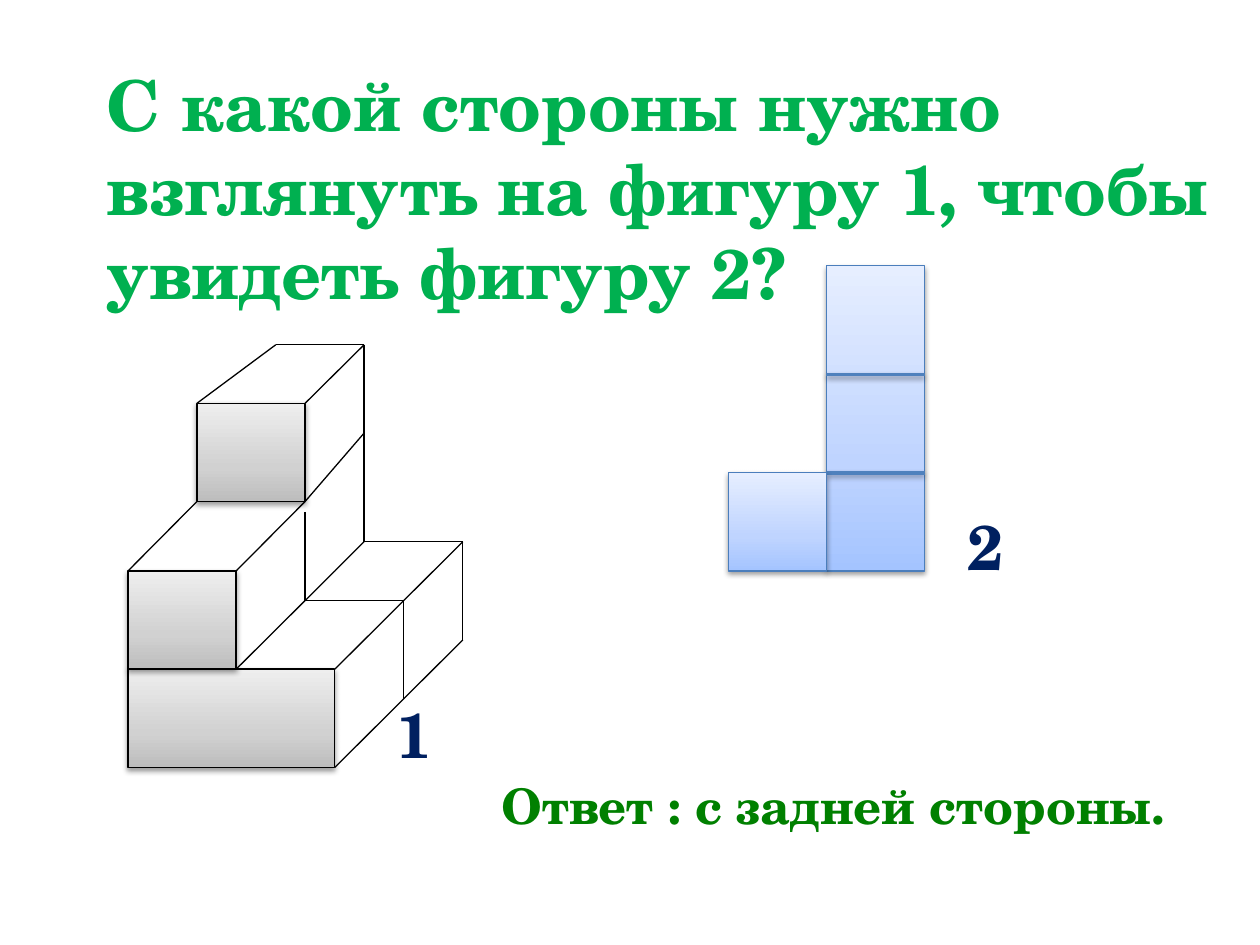
from dataclasses import dataclass

from lxml import etree
from pptx import Presentation
from pptx.dml.color import RGBColor
from pptx.enum.shapes import MSO_CONNECTOR, MSO_SHAPE
from pptx.oxml.ns import qn
from pptx.util import Cm, Pt

RECTANGLE = MSO_SHAPE.RECTANGLE
STRAIGHT = MSO_CONNECTOR.STRAIGHT


@dataclass(frozen=True)
class Theme:
    font: str = "TeX Gyre Schola"
    title: str = "00B050"
    answer: str = "008000"
    label: str = "002060"
    outline: str = "000000"
    blue_outline: str = "4B7EBC"
    blue_divider: str = "4F81BD"
    blue_stops: tuple = ((0, "A4C4FF"), (35, "BFD4FF"), (100, "E6EEFF"))
    gray_stops: tuple = ((0, "BDBDBD"), (35, "D1D1D1"), (100, "EEEEEE"))
    title_size: int = 40
    answer_size: int = 28
    label_size: int = 36
    thin: float = 0.75
    thick: float = 2


THEME = Theme()

# Side of a cube face, and width of a front face of figure 1
CUBE = 1.98
FRONT = 2.18

# Columns and rows of the corners of figure 1, in centimetres
LEFT, TOWER_LEFT, STEP_RIGHT = 2.58, 3.97, 4.76
TOWER_RIGHT, BASE_RIGHT, TOWER_BACK = 6.15, 6.75, 7.34
BASE_MIDDLE, BASE_BACK = 8.13, 9.33
TOP, TOWER_TOP, STEP_BACK = 6.95, 8.13, 10.11
STEP_TOP, BASE_TOP, BOTTOM = 11.51, 13.49, 15.47
BACK_TOP, BACK_BOTTOM, MIDDLE_TOP = 10.92, 12.90, 12.11

EDGES = [
    ((TOWER_LEFT, STEP_BACK), (LEFT, STEP_TOP)),
    ((BASE_RIGHT, BOTTOM), (BASE_BACK, BACK_BOTTOM)),
    ((BASE_BACK, BACK_TOP), (BASE_RIGHT, BASE_TOP)),
    ((TOWER_RIGHT, STEP_BACK), (STEP_RIGHT, STEP_TOP)),
    ((BASE_RIGHT, STEP_TOP), (STEP_RIGHT, BASE_TOP)),
    ((BASE_BACK, BACK_TOP), (BASE_BACK, BACK_BOTTOM)),
    ((BASE_MIDDLE, MIDDLE_TOP), (BASE_MIDDLE, MIDDLE_TOP + CUBE)),
    ((TOWER_RIGHT, 10.32), (TOWER_RIGHT, MIDDLE_TOP)),
    ((TOWER_RIGHT, MIDDLE_TOP), (BASE_MIDDLE, MIDDLE_TOP)),
    ((BASE_BACK, BACK_TOP), (TOWER_BACK, BACK_TOP)),
    ((TOWER_BACK, BACK_TOP), (BASE_RIGHT, STEP_TOP)),
    ((TOWER_BACK, TOP), (TOWER_RIGHT, TOWER_TOP)),
    ((5.56, TOP), (TOWER_LEFT, TOWER_TOP)),
    ((TOWER_BACK, TOP), (TOWER_BACK, BACK_TOP)),
    ((TOWER_BACK, TOP), (5.56, TOP)),
    ((TOWER_BACK, 8.73), (TOWER_RIGHT, STEP_BACK)),
]


def set_effects(shape, shadow):
    """Replace the theme effects by a soft shadow or by none."""
    properties = shape._element.spPr
    for old in properties.findall(qn("a:effectLst")):
        properties.remove(old)
    effects = etree.SubElement(properties, qn("a:effectLst"))
    if shadow:
        outer = etree.SubElement(effects, qn("a:outerShdw"), blurRad="40000",
                                 dist="20000", dir="5400000", rotWithShape="0")
        color = etree.SubElement(outer, qn("a:srgbClr"), val="000000")
        etree.SubElement(color, qn("a:alpha"), val="38000")


def set_gradient(shape, stops):
    shape.fill.gradient()
    shape.fill.gradient_angle = 90
    stop_list = shape._element.spPr.find(".//" + qn("a:gsLst"))
    for old in list(stop_list):
        stop_list.remove(old)
    for position, color in stops:
        stop = etree.SubElement(stop_list, qn("a:gs"), pos=str(position * 1000))
        etree.SubElement(stop, qn("a:srgbClr"), val=color)


def set_line(shape, color, width):
    shape.line.color.rgb = RGBColor.from_string(color)
    shape.line.width = Pt(width)


def add_face(slide, left, top, width, height, stops, outline):
    shape = slide.shapes.add_shape(RECTANGLE, Cm(left), Cm(top), Cm(width), Cm(height))
    set_gradient(shape, stops)
    set_line(shape, outline, THEME.thin)
    set_effects(shape, shadow=True)


def add_edge(slide, start, end, color=THEME.outline, width=THEME.thin, shadow=False):
    edge = slide.shapes.add_connector(STRAIGHT, *(Cm(value) for value in start + end))
    set_line(edge, color, width)
    set_effects(edge, shadow)


def add_text(slide, text, left, top, width, height, size, color):
    box = slide.shapes.add_textbox(Cm(left), Cm(top), Cm(width), Cm(height))
    box.text_frame.word_wrap = True
    paragraph = box.text_frame.paragraphs[0]
    run = paragraph.add_run()
    run.text = text
    run_format = {"name": THEME.font, "size": Pt(size), "bold": True}
    for name, value in run_format.items():
        setattr(run.font, name, value)
    run.font.color.rgb = RGBColor.from_string(color)


def add_flat_figure(slide):
    left, bottom, height = 16.66, 11.51, 6.15
    add_face(slide, left, bottom - height, CUBE, height,
             THEME.blue_stops, THEME.blue_outline)
    for row in (2, 1):
        y = bottom - row * CUBE
        add_edge(slide, (left, y), (left + CUBE, y),
                 THEME.blue_divider, THEME.thick, shadow=True)
    add_face(slide, left - CUBE, bottom - CUBE, CUBE, CUBE,
             THEME.blue_stops, THEME.blue_outline)


def add_solid_figure(slide):
    fronts = [(LEFT, BASE_TOP, BASE_RIGHT - LEFT), (LEFT, STEP_TOP, FRONT),
              (TOWER_LEFT, TOWER_TOP, FRONT)]
    for left, top, width in fronts:
        add_face(slide, left, top, width, CUBE, THEME.gray_stops, THEME.outline)
    for start, end in EDGES:
        add_edge(slide, start, end)


def main():
    presentation = Presentation()
    presentation.slide_width, presentation.slide_height = Cm(25.4), Cm(19.05)
    slide = presentation.slides.add_slide(presentation.slide_layouts[6])

    # Question and answer
    add_text(slide, "С какой стороны нужно взглянуть на фигуру 1, чтобы увидеть фигуру 2?",
             1.9, 1.12, 22.81, 5.38, THEME.title_size, THEME.title)
    add_text(slide, "Ответ : с задней стороны.",
             9.87, 15.5, 14.59, 1.45, THEME.answer_size, THEME.answer)

    # Figures
    add_flat_figure(slide)
    add_solid_figure(slide)

    # Figure numbers
    for number, left, top in (("1", 7.75, 13.89), ("2", 19.25, 10.11)):
        add_text(slide, number, left, top, 1.78, 1.8, THEME.label_size, THEME.label)

    presentation.save("out.pptx")


if __name__ == "__main__":
    main()
